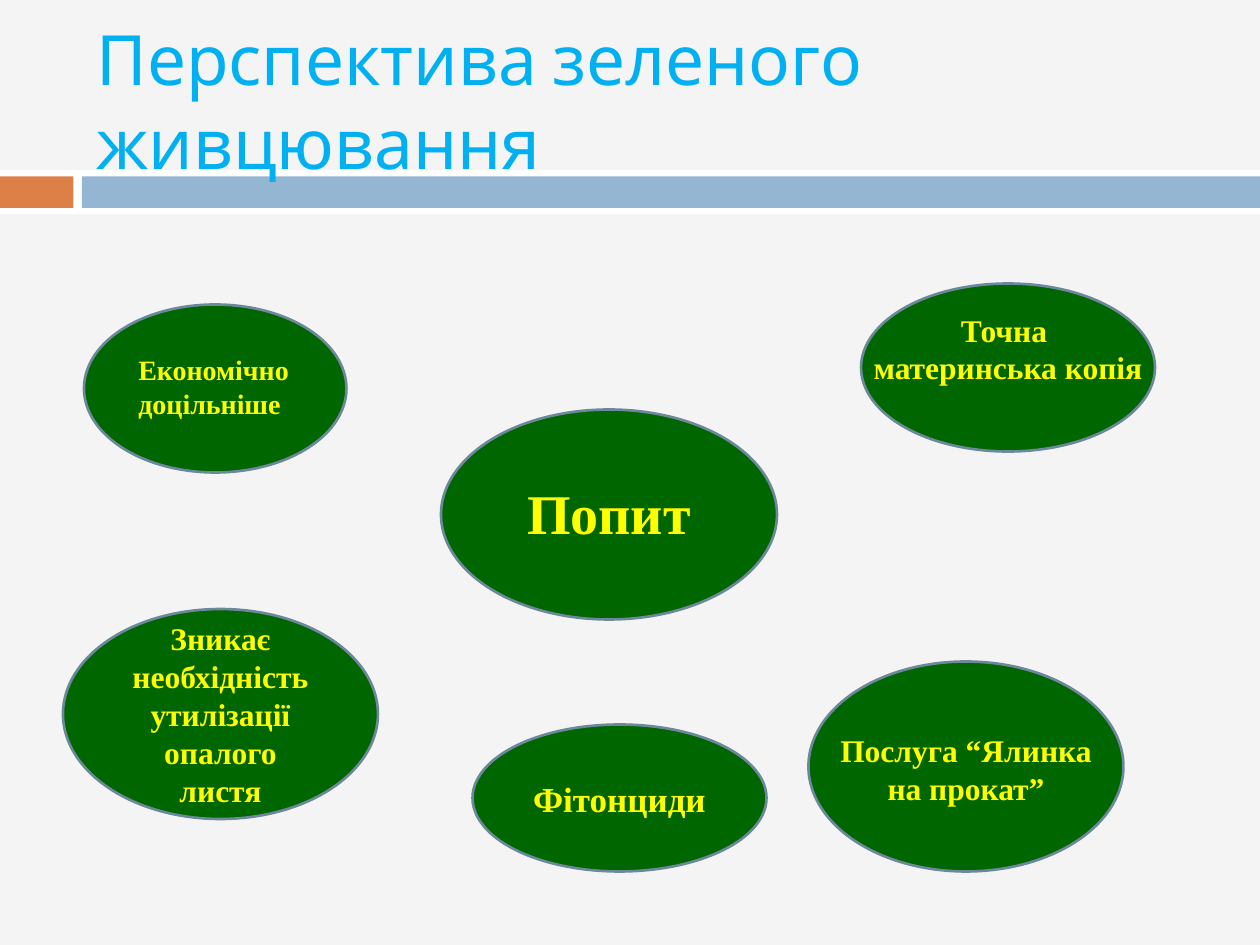
"""Build the slide on the prospects of green cuttings."""
from typing import NamedTuple

from pptx import Presentation
from pptx.dml.color import RGBColor
from pptx.enum.shapes import MSO_SHAPE
from pptx.enum.text import MSO_ANCHOR, MSO_AUTO_SIZE, PP_ALIGN
from pptx.util import Pt


class Box(NamedTuple):
    """Position and size in points."""
    left: float
    top: float
    width: float
    height: float


class Bubble(NamedTuple):
    """An ellipse, its text, and the separate box of that text if it has one."""
    ellipse: Box
    text: str
    size: float
    label: Box | None = None
    align: PP_ALIGN = PP_ALIGN.CENTER


BANDS = [
    (Box(0, 97.2, 720, 25.2), "FFFFFF"),
    (Box(0, 100.8, 42, 18), "DD8047"),
    (Box(46.8, 100.8, 673.2, 18), "94B6D2"),
]
TITLE = Box(48, 18, 642, 78)
BUBBLES = [
    Bubble(Box(48, 174, 150, 96), "Економічно доцільніше", 16,
           Box(72, 198, 126, 46), PP_ALIGN.LEFT),
    Bubble(Box(270, 414, 168, 84), "Фітонциди", 20),
    Bubble(Box(252, 234, 192, 120), "Попит", 32, Box(288, 270, 120, 46)),
    Bubble(Box(462, 378, 180, 120), "Послуга “Ялинка на прокат”", 18,
           Box(468, 414, 168, 51)),
    Bubble(Box(36, 348, 180, 120), "Зникає необхідність утилізації опалого листя", 18),
    Bubble(Box(492, 162, 168, 96), "Точна \nматеринська копія", 18,
           Box(486, 174, 180, 51)),
]


def color(value: str) -> RGBColor:
    """Turn a hex string into a colour."""
    return RGBColor.from_string(value)


def points(box: Box) -> list[Pt]:
    """Give the four lengths of a box."""
    return [Pt(length) for length in box]


def add_filled(slide, kind: MSO_SHAPE, box: Box, fill: str, line: str | None = None):
    """Add a flat shape with an optional outline."""
    shape = slide.shapes.add_shape(kind, *points(box))
    shape.shadow.inherit = False
    shape.fill.solid()
    shape.fill.fore_color.rgb = color(fill)
    if line:
        shape.line.color.rgb = color(line)
        shape.line.width = Pt(1.5)
    else:
        shape.line.fill.background()
    return shape


def write(frame, text: str, *, size: float, font: str = "Times New Roman",
          fill: str = "FFFF00", bold: bool = True,
          align: PP_ALIGN = PP_ALIGN.CENTER, anchor: MSO_ANCHOR = MSO_ANCHOR.MIDDLE,
          fit: MSO_AUTO_SIZE = MSO_AUTO_SIZE.NONE) -> None:
    """Fill a text frame with formatted text."""
    frame.text = text
    frame.word_wrap = True
    frame.auto_size = fit
    frame.vertical_anchor = anchor
    for paragraph in frame.paragraphs:
        paragraph.alignment = align
        for run in paragraph.runs:
            run.font.name = font
            run.font.size = Pt(size)
            run.font.bold = bold
            run.font.color.rgb = color(fill)


def add_label(slide, bubble: Bubble) -> None:
    """Add the text box that lies over an ellipse."""
    label = slide.shapes.add_textbox(*points(bubble.label))
    write(label.text_frame, bubble.text, size=bubble.size, align=bubble.align,
          anchor=MSO_ANCHOR.TOP, fit=MSO_AUTO_SIZE.SHAPE_TO_FIT_TEXT)


def main() -> None:
    """Build and save the presentation."""
    presentation = Presentation()
    presentation.slide_width, presentation.slide_height = Pt(720), Pt(540)
    slide = presentation.slides.add_slide(presentation.slide_layouts[5])
    slide.background.fill.solid()
    slide.background.fill.fore_color.rgb = color("F4F4F4")

    title = slide.shapes.title
    for box, fill in BANDS:
        band = add_filled(slide, MSO_SHAPE.RECTANGLE, box, fill)
        title.element.addprevious(band.element)
    title.left, title.top, title.width, title.height = points(TITLE)
    write(title.text_frame, "Перспектива зеленого живцювання", size=39.6,
          font="Cabin", fill="00B0F0", bold=False, align=PP_ALIGN.LEFT)

    for bubble in BUBBLES:
        ellipse = add_filled(slide, MSO_SHAPE.OVAL, bubble.ellipse, "006600", "6D879B")
        if not bubble.label:
            write(ellipse.text_frame, bubble.text, size=bubble.size)
    for bubble in BUBBLES:
        if bubble.label:
            add_label(slide, bubble)

    presentation.save("out.pptx")


if __name__ == "__main__":
    main()
